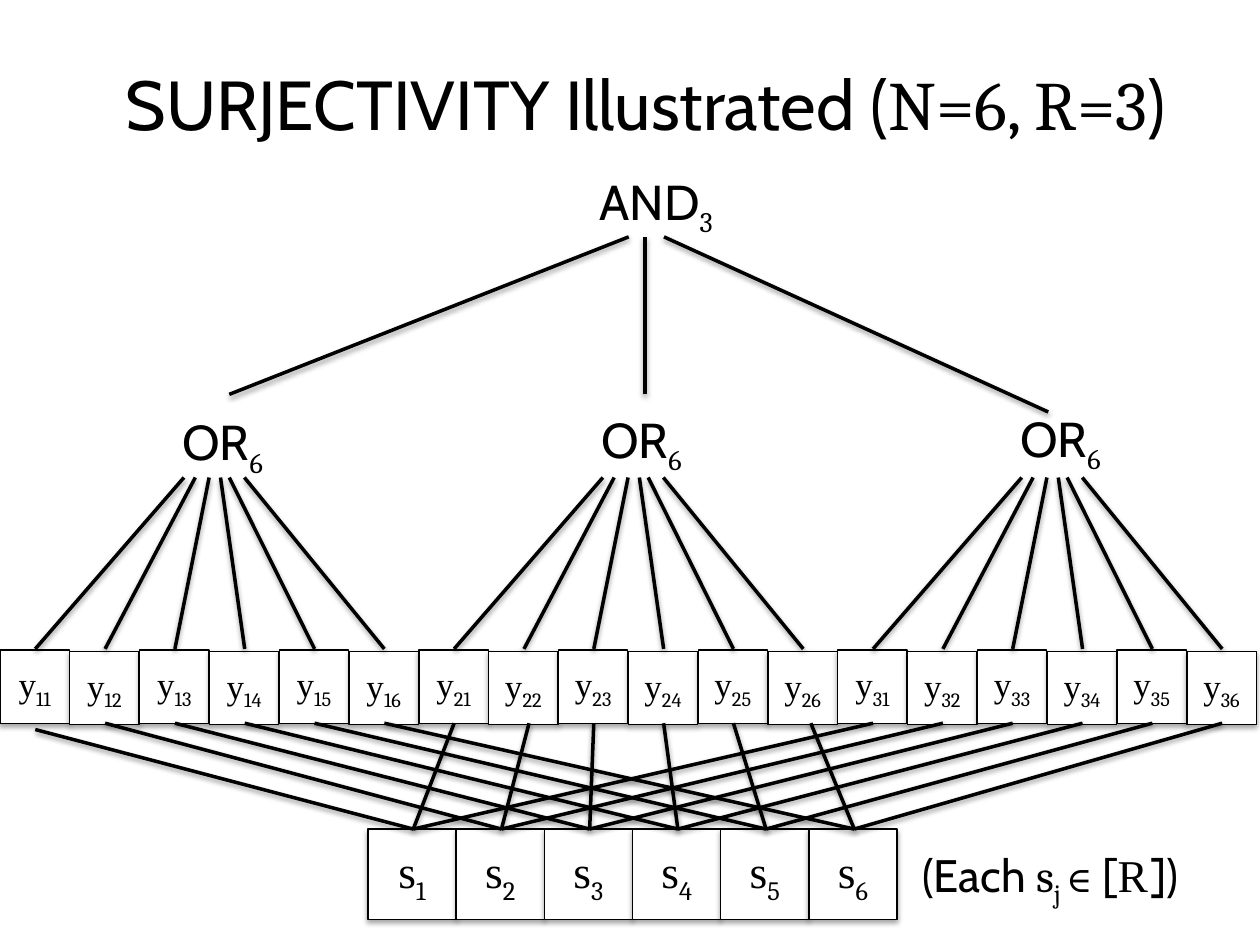
"""Build the SURJECTIVITY slide: an AND-OR tree over y cells linked to s cells."""
from dataclasses import dataclass
from typing import Any

from lxml.etree import SubElement
from pptx import Presentation
from pptx.dml.color import RGBColor
from pptx.enum.shapes import MSO_CONNECTOR as Connector, MSO_SHAPE as Preset
from pptx.enum.text import MSO_ANCHOR as Anchor, MSO_AUTO_SIZE as AutoSize, PP_ALIGN as Align
from pptx.oxml.ns import qn
from pptx.util import Inches, Pt

BLACK, WHITE = "000000", "FFFFFF"
SANS, SERIF, TIMES = "Cabin", "Cambria", "Times New Roman"
GROUPS, INPUTS = 3, 6
Y_PITCH, S_PITCH = 9.42 / 17, 0.7
Y_CENTER, S_CENTER = 0.28, 3.28
GROUP_PITCH = INPUTS * Y_PITCH
FAN_TOPS = (1.46, 1.55, 1.66, 1.75, 1.82, 1.94)
GATE_TOPS = (3.22, 3.2, 3.19)
LINK_NUDGES = {7: 0.04, 11: 0.06}
TITLE_FRAME = {"vertical_anchor": Anchor.MIDDLE, "auto_size": AutoSize.NONE, "word_wrap": True}
LABEL_FRAME = {"word_wrap": True, "auto_size": AutoSize.SHAPE_TO_FIT_TEXT}
CELL_FRAME = {"vertical_anchor": Anchor.MIDDLE, "word_wrap": True,
              "margin_left": 0, "margin_right": 0}


@dataclass(frozen=True)
class Span:
    text: str
    font: str
    size: float
    lowered: bool = False


@dataclass(frozen=True)
class Place:
    left: float
    top: float
    width: float
    height: float

    def lengths(self) -> list[int]:
        return [Inches(v) for v in (self.left, self.top, self.width, self.height)]


@dataclass(frozen=True)
class Edge:
    x1: float
    y1: float
    x2: float
    y2: float


def color(value: str) -> RGBColor:
    return RGBColor.from_string(value)


def apply_format(target: Any, values: dict[str, Any]) -> None:
    for name, value in values.items():
        setattr(target, name, value)


def add_shadow(shape: Any, opacity: int, distance: float) -> None:
    effects = SubElement(shape._element.spPr, qn("a:effectLst"))
    shadow = SubElement(effects, qn("a:outerShdw"), blurRad=str(Pt(3.1)),
                        dist=str(Pt(distance)), dir="5400000", rotWithShape="0")
    tint = SubElement(shadow, qn("a:srgbClr"), val=BLACK)
    SubElement(tint, qn("a:alpha"), val=str(opacity * 1000))


def write(shape: Any, spans: list[Span], frame_format: dict[str, Any], align: Align) -> None:
    frame = shape.text_frame
    apply_format(frame, frame_format)
    para = frame.paragraphs[0]
    para.alignment = align
    for item in spans:
        span = para.add_run()
        span.text = item.text
        apply_format(span.font, {"name": item.font, "size": Pt(item.size)})
        span.font.color.rgb = color(BLACK)
        if item.lowered:
            span._r.get_or_add_rPr().set("baseline", "-25000")


def add_cell(shapes: Any, place: Place, letter: str, index: str, size: float) -> None:
    box = shapes.add_shape(Preset.RECTANGLE, *place.lengths())
    box.fill.solid()
    box.fill.fore_color.rgb = color(WHITE)
    box.line.color.rgb = color(BLACK)
    box.line.width = Pt(0.75)
    add_shadow(box, 35, 1.8)
    write(box, [Span(letter, TIMES, size), Span(index, SERIF, size, True)],
          CELL_FRAME, Align.CENTER)


def add_edge(shapes: Any, edge: Edge) -> None:
    ends = [Inches(v) for v in (edge.x1, edge.y1, edge.x2, edge.y2)]
    line = shapes.add_connector(Connector.STRAIGHT, *ends)
    line.line.color.rgb = color(BLACK)
    line.line.width = Pt(2)
    add_shadow(line, 38, 1.6)


def add_label(shapes: Any, place: Place, spans: list[Span]) -> None:
    write(shapes.add_textbox(*place.lengths()), spans, LABEL_FRAME, Align.LEFT)


def add_gate(shapes: Any, left: float, top: float, name: str, count: int) -> None:
    add_label(shapes, Place(left, top, 1.43, 0.57),
              [Span(name, SANS, 28), Span(str(count), SERIF, 28, True)])


def add_fan(shapes: Any, group: int) -> None:
    shift = group * GROUP_PITCH
    fan = shapes.add_group_shape().shapes
    for i, top in enumerate(FAN_TOPS):
        add_edge(fan, Edge(Y_CENTER + shift + i * Y_PITCH, 5.15, top + shift, 3.79))
    add_gate(fan, 1.35 + shift, GATE_TOPS[group], "OR", INPUTS)


def main() -> None:
    deck = Presentation()
    deck.slide_width, deck.slide_height = Inches(10), Inches(7.5)
    page = deck.slides.add_slide(deck.slide_layouts[5])
    shapes = page.shapes

    title_place = Place(0.5, 0.19, 9.25, 1.25)
    apply_format(shapes.title, dict(zip(("left", "top", "width", "height"),
                                        title_place.lengths())))
    write(shapes.title, [Span("SURJECTIVITY Illustrated (", SANS, 39.6),
                         Span("N=6, R=3", SERIF, 39.6), Span(")", SANS, 39.6)],
          TITLE_FRAME, Align.CENTER)

    for i in range(INPUTS):
        add_cell(shapes, Place(2.92 + i * S_PITCH, 6.58, 0.7, 0.72), "s", str(i + 1), 26)
    for i in range(GROUPS * INPUTS):
        group, member = divmod(i, INPUTS)
        place = Place(i * Y_PITCH, 5.16 + i % 2 * 0.01, 0.55, 0.58)
        add_cell(shapes, place, "y", f"{group + 1}{member + 1}", 20)

    for edge in (Edge(1.82, 3.13, 4.99, 1.88), Edge(5.12, 3.13, 5.12, 1.88),
                 Edge(8.32, 3.27, 5.27, 1.88)):
        add_edge(shapes, edge)
    add_label(shapes, Place(7.22, 6.67, 2.54, 0.54), [
        Span("(Each ", SANS, 26), Span("s", SERIF, 26), Span("j ", SERIF, 26, True),
        Span("∈", SERIF, 20), Span(" [", SANS, 26), Span("R", TIMES, 26),
        Span(" ", SANS, 8), Span("])", SANS, 26)])
    add_gate(shapes, 4.66, 1.31, "AND", GROUPS)
    for group in range(GROUPS):
        add_fan(shapes, group)

    for i in range(GROUPS * INPUTS):
        start = Y_CENTER + i * Y_PITCH + LINK_NUDGES.get(i, 0)
        top = 5.74 if i else 5.79
        add_edge(shapes, Edge(start, top, S_CENTER + i % INPUTS * S_PITCH, 6.58))

    deck.save("out.pptx")


if __name__ == "__main__":
    main()
